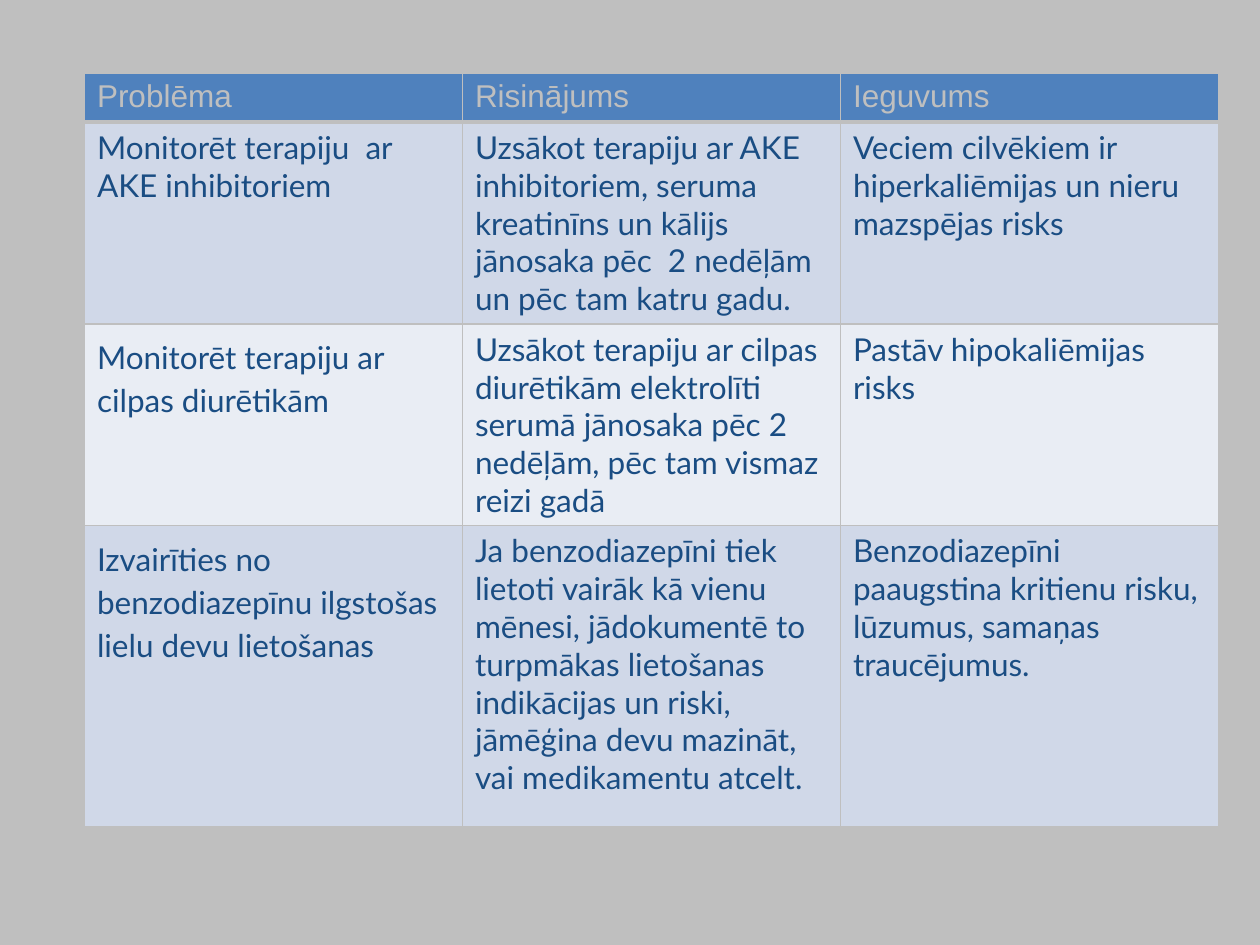
import pptx
import pptx.dml.color
import pptx.oxml.ns
import pptx.util
from lxml import etree

RGB = pptx.dml.color.RGBColor
GREY = RGB(0xBF, 0xBF, 0xBF)
HEADER = RGB(0x4F, 0x81, 0xBD)
BAND_DARK = RGB(0xD0, 0xD8, 0xE8)
BAND_LIGHT = RGB(0xE9, 0xED, 0xF4)
NAVY = RGB(0x1A, 0x4D, 0x83)

ROWS = [
    ("Problēma", "Risinājums", "Ieguvums"),
    ("Monitorēt terapiju  ar AKE inhibitoriem",
     "Uzsākot terapiju ar AKE inhibitoriem, seruma kreatinīns un kālijs "
     "jānosaka pēc  2 nedēļām un pēc tam katru gadu.",
     "Veciem cilvēkiem ir hiperkaliēmijas un nieru mazspējas risks"),
    ("Monitorēt terapiju ar cilpas diurētikām",
     "Uzsākot terapiju ar cilpas diurētikām elektrolīti serumā jānosaka "
     "pēc 2 nedēļām, pēc tam vismaz reizi gadā",
     "Pastāv hipokaliēmijas risks"),
    ("Izvairīties no benzodiazepīnu ilgstošas lielu devu lietošanas",
     "Ja benzodiazepīni tiek lietoti vairāk kā vienu mēnesi, jādokumentē to "
     "turpmākas lietošanas indikācijas un riski, jāmēģina devu mazināt, "
     "vai medikamentu atcelt.",
     "Benzodiazepīni paaugstina kritienu risku, lūzumus, samaņas traucējumus."),
]
HEIGHTS = [0.39, 1.6, 1.6, 2.39]
HEIGHTS[1:3] = [1.56, 1.56]
FILLS = [HEADER, BAND_DARK, BAND_LIGHT, BAND_DARK]
COL_WIDTH = 3


def add_border(cell, side, width):
    qn = pptx.oxml.ns.qn
    ln = etree.SubElement(cell._tc.get_or_add_tcPr(), qn("a:ln" + side),
                          w=str(pptx.util.Pt(width)))
    fill = etree.SubElement(ln, qn("a:solidFill"))
    etree.SubElement(fill, qn("a:srgbClr"), val=str(GREY))


prs = pptx.Presentation()
prs.slide_width = pptx.util.Inches(10)
prs.slide_height = pptx.util.Inches(7.5)
s = prs.slides.add_slide(prs.slide_layouts[6])
s.background.fill.solid()
s.background.fill.fore_color.rgb = GREY

table = s.shapes.add_table(
    len(ROWS), len(ROWS[0]), pptx.util.Inches(0.67), pptx.util.Inches(0.58),
    pptx.util.Inches(COL_WIDTH * len(ROWS[0])),
    pptx.util.Inches(sum(HEIGHTS))).table
table.first_row = False
table.horz_banding = False

for i, texts in enumerate(ROWS):
    table.rows[i].height = pptx.util.Inches(HEIGHTS[i])
    for j, text in enumerate(texts):
        cell = table.cell(i, j)
        for side in "LRTB":
            add_border(cell, side, 3 if i == 0 and side == "B" else 1)
        cell.fill.solid()
        cell.fill.fore_color.rgb = FILLS[i]
        cell.text = text
        p = cell.text_frame.paragraphs[0]
        p.font.size = pptx.util.Pt(18)
        p.font.bold = False
        p.font.name = "Lato" if i else "Arial"
        p.font.color.rgb = NAVY if i else GREY
        if i > 1 and j == 0:
            p.line_spacing = 1.15
            cell.margin_top = pptx.util.Inches(0.07)
            cell.margin_bottom = pptx.util.Inches(0.1)

prs.save("out.pptx")
